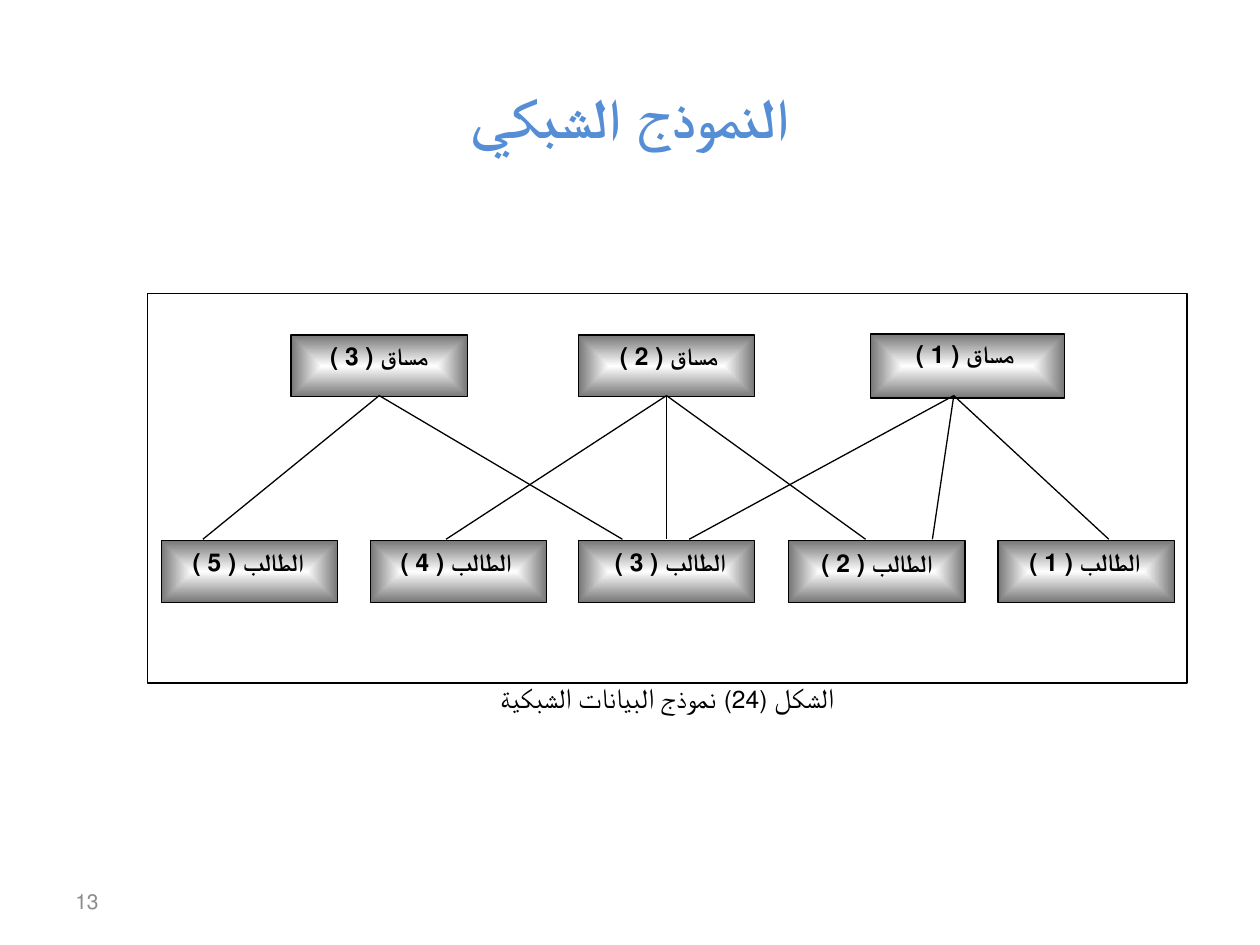
from dataclasses import dataclass
from pptx import Presentation
from pptx.dml.color import RGBColor
from pptx.enum.shapes import MSO_CONNECTOR, MSO_SHAPE
from pptx.enum.text import MSO_ANCHOR, PP_ALIGN
from pptx.oxml import parse_xml
from pptx.oxml.ns import nsdecls, qn
from pptx.util import Inches, Pt


@dataclass(frozen=True)
class Theme:
    font: str = "Calibri"
    blue: str = "558ED5"
    black: str = "000000"
    white: str = "FFFFFF"
    shade: str = "767676"
    gray: str = "8C8C8C"
    head: int = 32
    body: int = 16
    label: int = 14
    small: int = 12
    line: float = 0.75


class Deck:
    def __init__(self, theme):
        self.theme = theme
        self.file = Presentation()
        self.file.slide_width = Inches(10)
        self.file.slide_height = Inches(7.5)
        self.slide = self.file.slides.add_slide(self.file.slide_layouts[5])
        self.shapes = self.slide.shapes

    def style(self, frame, parts, size, color, bold=False,
              align=PP_ALIGN.CENTER, after=0):
        frame.word_wrap = True
        para = frame.paragraphs[0]
        for text, scale in parts:
            run = para.add_run()
            run.text = text
            if len(parts) > 1:
                run.font.size = Pt(scale)
        para.alignment = align
        para.space_after = Pt(after)
        para._p.get_or_add_pPr().set("rtl", "1")
        font = para.font
        font.name = self.theme.font
        font.size = Pt(size)
        font.bold = bold
        font.color.rgb = RGBColor.from_string(color)

    def title(self, text, *area):
        shape = self.shapes.title
        shape.left, shape.top, shape.width, shape.height = map(Inches, area)
        frame = shape.text_frame
        frame.vertical_anchor = MSO_ANCHOR.MIDDLE
        self.style(frame, [(text, None)], self.theme.head, self.theme.blue, True)

    def text(self, area, parts, size, color, anchor=MSO_ANCHOR.TOP, **looks):
        frame = self.shapes.add_textbox(*map(Inches, area)).text_frame
        frame.vertical_anchor = anchor
        self.style(frame, parts, size, color, **looks)

    def label(self, text, *area):
        self.text(area, [(text, None)], self.theme.label, self.theme.black,
                  bold=True, after=10)

    def box(self, *area):
        shape = self.shapes.add_shape(MSO_SHAPE.RECTANGLE, *map(Inches, area))
        shape.shadow.inherit = False
        shape.fill.solid()
        shape.fill.fore_color.rgb = RGBColor.from_string(self.theme.white)
        self.stroke(shape.line)
        return shape

    def node(self, *area):
        shape = self.box(*area)
        shape.fill.gradient()
        stops = zip(shape.fill.gradient_stops, (0, 1),
                    (self.theme.white, self.theme.shade))
        for stop, place, color in stops:
            stop.position = place
            stop.color.rgb = RGBColor.from_string(color)
        grad = shape._element.spPr.find(qn("a:gradFill"))
        grad.replace(grad.find(qn("a:lin")), parse_xml(
            f'<a:path {nsdecls("a")} path="shape"><a:fillToRect l="50000" '
            't="50000" r="50000" b="50000"/></a:path>'))

    def link(self, *ends):
        line = self.shapes.add_connector(MSO_CONNECTOR.STRAIGHT, *map(Inches, ends))
        self.stroke(line.line)
        line._element.spPr.append(parse_xml(f'<a:effectLst {nsdecls("a")}/>'))

    def stroke(self, line):
        line.color.rgb = RGBColor.from_string(self.theme.black)
        line.width = Pt(self.theme.line)


def main():
    theme = Theme()
    deck = Deck(theme)
    deck.title("النموذج الشبكي", 0.5, 0.3, 9, 1.25)
    deck.box(1.17, 2.33, 8.25, 3.09)

    courses = [(6.91, 2.65, 1.54, 0.51), (4.59, 2.66, 1.4, 0.49),
               (2.31, 2.66, 1.4, 0.49)]
    pupils = [(left, 4.29, 1.4, 0.49) for left in (7.92, 6.26, 4.59, 2.94, 1.28)]
    for area in courses + pupils:
        deck.node(*area)

    links = {7.57: (7.4, 5.47, 8.8), 5.29: (6.87, 5.29, 3.54), 3.01: (4.94, 1.61)}
    for start, ends in links.items():
        for end in ends:
            deck.link(start, 3.14, end, 4.28)

    rows = [
        ("مساق", [(6.87, 2.64), (4.52, 2.66), (2.22, 2.66)]),
        ("الطالب", [(7.82, 4.29), (6.17, 4.3), (4.53, 4.29), (2.83, 4.29),
                    (1.18, 4.29)]),
    ]
    for name, spots in rows:
        for num, (left, top) in enumerate(spots, 1):
            deck.label(f"{name} ( {num} )", left, top, 1.58, 0.49)

    caption = [("الشكل ", theme.body), ("(24)", theme.label),
               (" نموذج البيانات الشبكية", theme.body)]
    deck.text((3.1, 5.35, 4.39, 0.65), caption, theme.body, theme.black, after=10)
    deck.text((0.5, 6.95, 2.33, 0.4), [("13", None)], theme.small, theme.gray,
              MSO_ANCHOR.MIDDLE, align=PP_ALIGN.LEFT)
    deck.file.save("out.pptx")


if __name__ == "__main__":
    main()
